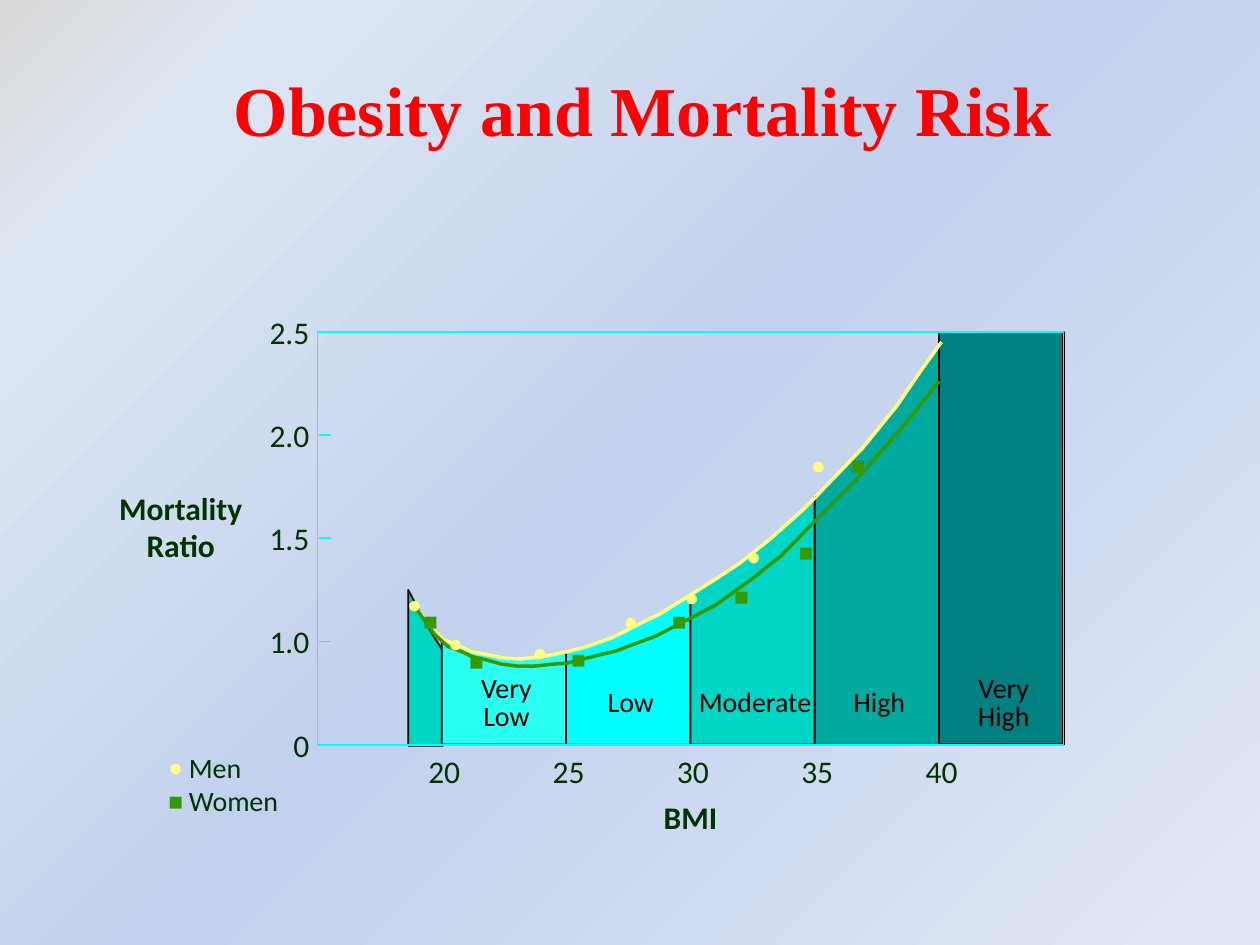
from collections import namedtuple

from lxml import etree
from pptx import Presentation
from pptx.dml.color import RGBColor
from pptx.enum.shapes import MSO_CONNECTOR as Connector, MSO_SHAPE as Shape
from pptx.enum.text import MSO_ANCHOR as Anchor, PP_ALIGN as Align
from pptx.oxml import parse_xml
from pptx.oxml.ns import nsdecls, qn
from pptx.util import Inches, Pt

WIDTH, HEIGHT = 10, 7.5
YELLOW, GREEN, CYAN, BLACK, DARK = "FFFF80", "379901", "00FFFF", "000000", "003300"

# Plot grid: one column is 5 BMI units from 15, one row is one axis step
COLUMNS, ROWS = 6, 4

MEN_CURVE = [
    (0.76, 2.62), (0.88, 2.82), (1.01, 2.98), (1.15, 3.05), (1.24, 3.1), (1.37, 3.13),
    (1.49, 3.16), (1.63, 3.17), (1.8, 3.15), (2.01, 3.1), (2.17, 3.05), (2.38, 2.96),
    (2.56, 2.85), (2.76, 2.73), (3, 2.55), (3.2, 2.4), (3.4, 2.24), (3.65, 2),
    (3.92, 1.71), (4.12, 1.46), (4.39, 1.12), (4.66, 0.72), (4.87, 0.35), (5.02, 0.1)]
WOMEN_CURVE = [
    (0.75, 2.61), (0.94, 2.93), (1.05, 3.05), (1.16, 3.1), (1.25, 3.15), (1.36, 3.18),
    (1.48, 3.22), (1.61, 3.24), (1.74, 3.24), (1.9, 3.22), (2.01, 3.21), (2.27, 3.13),
    (2.41, 3.09), (2.56, 3.02), (2.72, 2.95), (2.88, 2.85), (3.2, 2.65), (3.49, 2.4),
    (3.73, 2.17), (3.99, 1.85), (4.33, 1.44), (4.73, 0.89), (5, 0.48)]
MEN_POINTS = [(0.78, 2.69), (1.11, 3.07), (1.79, 3.16), (2.52, 2.86),
              (3.01, 2.63), (3.51, 2.23), (4.03, 1.35)]
WOMEN_POINTS = [(0.91, 2.86), (1.28, 3.25), (2.1, 3.23), (2.91, 2.86),
                (3.41, 2.62), (3.93, 2.19), (4.35, 1.35)]
UNDERWEIGHT = [(1.01, 3.09), (1.01, 4.01), (0.73, 4.01), (0.73, 2.5),
               (0.8, 2.66), (0.87, 2.82), (0.94, 2.96)]
ZONES = [("Very\nLow", "2AFFF1"), ("Low", CYAN), ("Moderate", "00D5C6"),
         ("High", "00AA9E"), ("Very\nHigh", "008080")]

Box = namedtuple("Box", "left top width height")


def colour(value):
    return RGBColor.from_string(value)


def at(box, column, row):
    """Turn a grid position in the plot box into a slide position."""
    return (Inches(box.left + column * box.width / COLUMNS),
            Inches(box.top + row * box.height / ROWS))


def style(shape, fill, line, weight):
    shape.shadow.inherit = False
    if fill:
        shape.fill.solid()
        shape.fill.fore_color.rgb = colour(fill)
    else:
        shape.fill.background()
    shape.line.color.rgb = colour(line)
    shape.line.width = Pt(weight)


def add_outline(slide, box, points, fill, line, weight):
    start, *rest = [at(box, *point) for point in points]
    builder = slide.shapes.build_freeform(*start)
    builder.add_line_segments(rest, close=bool(fill))
    style(builder.convert_to_shape(), fill, line, weight)


def add_rectangle(slide, box, first, last, fill, line, weight):
    left, top = at(box, first, 0)
    right, bottom = at(box, last, ROWS)
    shape = slide.shapes.add_shape(Shape.RECTANGLE, left, top, right - left, bottom - top)
    style(shape, fill, line, weight)


def write(frame, text, size, font, ink, bold, align, spacing):
    frame.word_wrap = True
    paragraph = frame.paragraphs[0]
    paragraph.alignment = align
    paragraph.line_spacing = spacing
    for index, line in enumerate(text.split("\n")):
        if index:
            paragraph.add_line_break()
        run = paragraph.add_run()
        run.text = line
        run.font.size = Pt(size)
        run.font.name = font
        run.font.bold = bold
        run.font.color.rgb = colour(ink)


def add_label(slide, box, centre, size, text, points=18, spacing=21, ink=DARK,
              bold=False, align=Align.CENTER, font="Calibri"):
    """Put a text box of size (columns, rows) around a grid position."""
    left, top = at(box, centre[0] - size[0] / 2, centre[1] - size[1] / 2)
    right, bottom = at(box, centre[0] + size[0] / 2, centre[1] + size[1] / 2)
    frame = slide.shapes.add_textbox(left, top, right - left, bottom - top).text_frame
    frame.margin_left = frame.margin_right = Inches(0.02)
    frame.margin_top = frame.margin_bottom = Inches(0.03)
    write(frame, text, points, font, ink, bold, align, Pt(spacing))


def add_markers(slide, box, points, symbol, ink):
    for point in points:
        add_label(slide, box, point, (0.25, 0.45), symbol, 14, 16, ink, font="Arial")


def curve_between(curve, first, last):
    """Cut a curve at two columns, interpolating the cut ends."""
    def cut(column):
        for (x1, y1), (x2, y2) in zip(curve, curve[1:]):
            if x1 <= column <= x2:
                return column, y1 + (y2 - y1) * (column - x1) / (x2 - x1)

    inner = [point for point in curve if first < point[0] < last]
    return [cut(first), *inner, cut(last)]


def add_background(slide):
    stops = [(0, "D9D9D9"), (13, "DCE6F2"), (50, "C2D1ED"), (100, "E1E8F5")]
    gradient = "".join(f'<a:gs pos="{position * 1000}"><a:srgbClr val="{value}"/></a:gs>'
                       for position, value in stops)
    background = parse_xml(
        f'<p:bg {nsdecls("p", "a")}><p:bgPr><a:gradFill rotWithShape="1">'
        f'<a:gsLst>{gradient}</a:gsLst><a:lin ang="2700000" scaled="0"/></a:gradFill>'
        '<a:effectLst/></p:bgPr></p:bg>')
    slide.element.cSld.insert(0, background)


def add_title(slide, box):
    frame = slide.shapes.add_textbox(*[Inches(length) for length in box]).text_frame
    frame.vertical_anchor = Anchor.MIDDLE
    write(frame, "Obesity and Mortality Risk", 40, "Times New Roman", "FF0000",
          True, Align.CENTER, 0.9)


def add_zones(slide, box):
    add_outline(slide, box, UNDERWEIGHT, "00D5C6", BLACK, 1)
    for column, (name, fill) in enumerate(ZONES, start=1):
        if column < 5:
            top = curve_between(MEN_CURVE, column, column + 1)
            base = [(column + 1, ROWS), (column, ROWS)]
            add_outline(slide, box, top + base, fill, BLACK, 1)
        else:
            add_rectangle(slide, box, column, column + 1, fill, BLACK, 1.38)


def add_series(slide, box):
    add_outline(slide, box, MEN_CURVE, None, YELLOW, 2)
    add_outline(slide, box, WOMEN_CURVE, None, GREEN, 2)
    add_markers(slide, box, MEN_POINTS, "●", YELLOW)
    add_markers(slide, box, WOMEN_POINTS, "■", GREEN)


def add_axes(slide, box):
    for row, text in enumerate(["2.5", "2.0", "1.5", "1.0", "0"]):
        add_label(slide, box, (-0.42, row + 0.06), (0.75, 0.54), text, align=Align.RIGHT)
    for column in range(1, COLUMNS):
        add_label(slide, box, (column + 0.02, 4.32), (0.75, 0.54), str(15 + 5 * column))
    add_label(slide, box, (3, 4.76), (4.4, 0.54), "BMI", bold=True)
    add_label(slide, box, (-1.1, 1.95), (1.3, 0.9), "Mortality\nRatio", bold=True)
    for column, (name, fill) in enumerate(ZONES, start=1):
        height = 0.72 if "\n" in name else 0.45
        add_label(slide, box, (column + 0.52, 3.66), (1.09, height), name, 16, 16, BLACK)
    # Ticks
    for row in range(1, ROWS):
        tick = slide.shapes.add_connector(
            Connector.STRAIGHT, *at(box, 0.01, row), *at(box, 0.11, row))
        tick.line.color.rgb = colour(CYAN)
        tick.line.width = Pt(1)
        etree.SubElement(tick.element.spPr, qn("a:effectLst"))


def add_legend(slide, box):
    add_label(slide, box, (-0.59, 4.44), (0.93, 0.83), "Men\nWomen", 16, 19,
              align=Align.LEFT)
    add_markers(slide, box, [(-1.14, 4.6)], "■", GREEN)
    add_markers(slide, box, [(-1.14, 4.27)], "●", YELLOW)


def main():
    presentation = Presentation()
    presentation.slide_width, presentation.slide_height = Inches(WIDTH), Inches(HEIGHT)
    slide = presentation.slides.add_slide(presentation.slide_layouts[6])
    plot = Box(0.252 * WIDTH, 0.351 * HEIGHT, 0.592 * WIDTH, 0.437 * HEIGHT)
    add_background(slide)
    add_zones(slide, plot)
    add_series(slide, plot)
    add_axes(slide, plot)
    add_legend(slide, plot)
    add_title(slide, Box(0.09 * WIDTH, 0.06 * HEIGHT, 0.84 * WIDTH, 0.12 * HEIGHT))
    # Plot frame
    add_rectangle(slide, plot, 0, COLUMNS, None, CYAN, 1)
    presentation.save("out.pptx")


if __name__ == "__main__":
    main()
